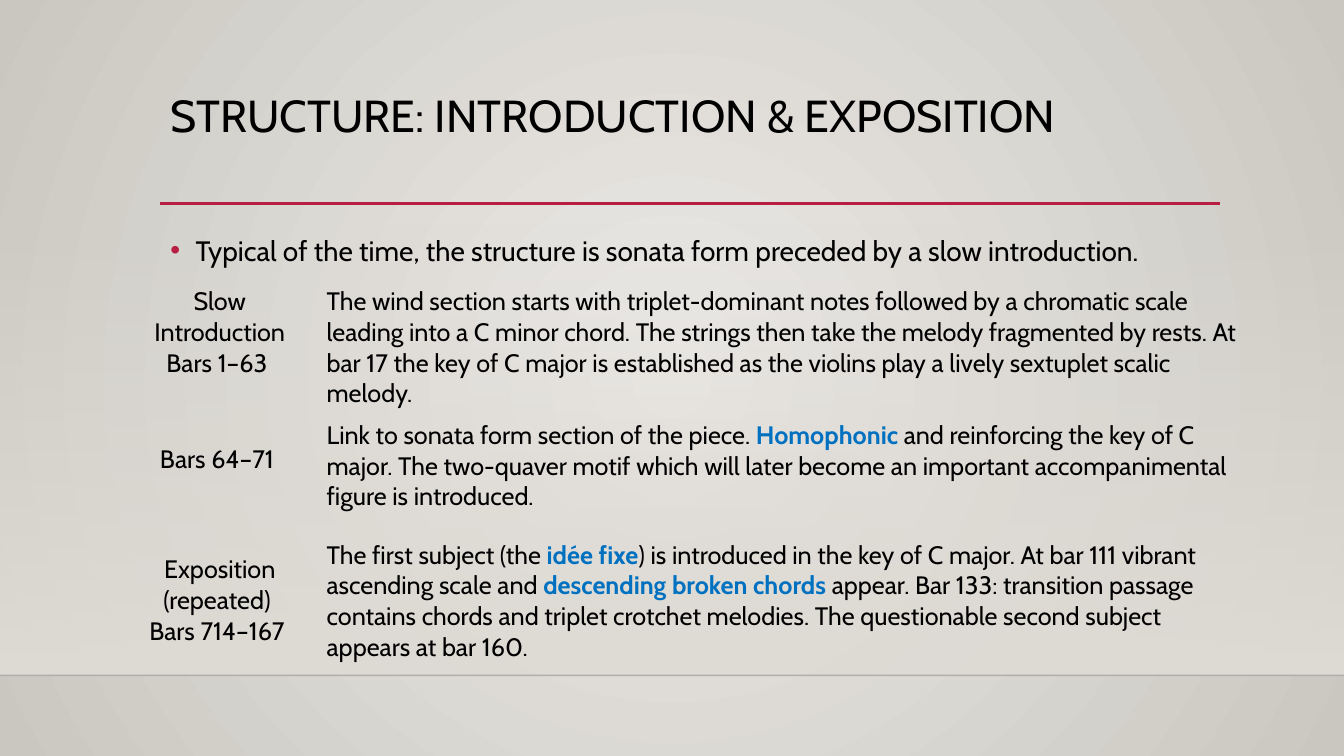
from lxml.etree import SubElement
from pptx import Presentation
from pptx.dml.color import RGBColor
from pptx.enum.shapes import MSO_CONNECTOR, MSO_SHAPE
from pptx.enum.text import MSO_ANCHOR, MSO_AUTO_SIZE, PP_ALIGN
from pptx.oxml import parse_xml
from pptx.oxml.ns import nsdecls, qn
from pptx.util import Inches, Pt

FONT = "Cabin"
BLACK, BLUE, CRIMSON, SAND = "000000", "0070C0", "B71E42", "DFDBD5"
NO_GRID_STYLE = "{2D5ABB26-0587-4C30-8999-92F81FD0307C}"

TITLE = "STRUCTURE: INTRODUCTION & EXPOSITION"
SUMMARY = "Typical of the time, the structure is sonata form preceded by a slow introduction."
SECTIONS = [
    (1.3, ["Slow Introduction Bars 1–63 "], [
        ("The wind section starts with triplet-dominant notes followed by a chromatic scale "
         "leading into a C minor chord. The strings then take the melody fragmented by rests. "
         "At bar 17 the key of C major is established as the violins play a lively sextuplet "
         "scalic melody.", False)]),
    (1.19, ["Bars 64–71 "], [
        ("Link to sonata form section of the piece. ", False),
        ("Homophonic", True),
        (" and reinforcing the key of C major. The two-quaver motif which will later become "
         "an important accompanimental figure is introduced.", False)]),
    (1.61, ["Exposition (repeated) ", "Bars 714–167 "], [
        ("The first subject (the ", False),
        ("idée fixe", True),
        (") is introduced in the key of C major. At bar 111 vibrant ascending scale and ", False),
        ("descending broken chords ", True),
        ("appear. Bar 133: transition passage contains chords and triplet crotchet melodies. "
         "The questionable second subject appears at bar 160.", False)]),
]
COLUMN_WIDTHS = (1.92, 9.32)
LABEL_BOTTOM_MARGIN = 0.36


def color(value):
    return RGBColor.from_string(value)


def style(font, size, value=BLACK, bold=False):
    font.name = FONT
    font.size = Pt(size)
    font.color.rgb = color(value)
    font.bold = bold


def gradient(start, end, start_alpha, direction):
    return parse_xml(
        f'<a:gradFill {nsdecls("a")} rotWithShape="1"><a:gsLst>'
        f'<a:gs pos="0"><a:srgbClr val="{start}"><a:alpha val="{start_alpha * 1000}"/></a:srgbClr></a:gs>'
        f'<a:gs pos="100000"><a:srgbClr val="{end}"/></a:gs></a:gsLst>{direction}</a:gradFill>')


def replace_gradient(fill, parent, new_gradient):
    fill.gradient()
    old_gradient = parent.find(qn("a:gradFill"))
    parent.replace(old_gradient, new_gradient)


def add_rule(slide, left, right, top, value, width, opacity=100):
    rule = slide.shapes.add_connector(
        MSO_CONNECTOR.STRAIGHT, Inches(left), Inches(top), Inches(right), Inches(top))
    rule.line.color.rgb = color(value)
    rule.line.width = Pt(width)
    properties = rule._element.spPr
    if opacity < 100:
        SubElement(properties.find(".//" + qn("a:srgbClr")), qn("a:alpha"), val=str(opacity * 1000))
    SubElement(properties, qn("a:effectLst"))


def add_backdrop(slide):
    circle = ('<a:path path="circle"><a:fillToRect l="50000" t="50000" r="50000" b="50000"/></a:path>')
    background = slide.background
    background.fill.solid()
    replace_gradient(background.fill, slide._element.cSld.bg.bgPr,
                     gradient("ECEAE7", "CAC7C1", 100, circle))
    wall = slide.shapes.add_shape(
        MSO_SHAPE.RECTANGLE, 0, Inches(2.21), Inches(13.33), Inches(4.49))
    wall.shadow.inherit = False
    wall.line.fill.background()
    replace_gradient(wall.fill, wall._element.spPr,
                     gradient(SAND, SAND, 0, '<a:lin ang="5400000" scaled="0"/>'))
    add_rule(slide, 0, 13.33, 6.7, "000001", 1, 20)
    add_rule(slide, 1.59, 12.1, 2.02, CRIMSON, 2.5)


def fill_placeholder(slide, placeholder, text, top, height, size, spacing, bulleted=False):
    slide.shapes._spTree.append(placeholder._element)
    placeholder.left, placeholder.top = Inches(1.59), Inches(top)
    placeholder.width, placeholder.height = Inches(10.5), Inches(height)
    frame = placeholder.text_frame
    frame.text = text
    frame.auto_size = MSO_AUTO_SIZE.NONE
    frame.vertical_anchor = MSO_ANCHOR.TOP
    paragraph = frame.paragraphs[0]
    if bulleted:
        properties = paragraph._p.get_or_add_pPr()
        properties.set("marL", str(Inches(0.25)))
        properties.set("indent", str(-Inches(0.25)))
        SubElement(SubElement(properties, qn("a:buClr")), qn("a:srgbClr"), val=CRIMSON)
        SubElement(properties, qn("a:buFont"), typeface="Arial")
        SubElement(properties, qn("a:buChar"), char="•")
    paragraph.alignment = PP_ALIGN.LEFT
    paragraph.line_spacing = spacing
    paragraph.space_before = Pt(0)
    style(paragraph.font, size)


def add_sections(slide):
    total_height = sum(height for height, _, _ in SECTIONS)
    table = slide.shapes.add_table(
        len(SECTIONS), 2, Inches(1.22), Inches(2.79),
        Inches(sum(COLUMN_WIDTHS)), Inches(total_height)).table
    table.first_row = table.horz_banding = False
    table._tbl.tblPr.find(qn("a:tableStyleId")).text = NO_GRID_STYLE
    for column, width in zip(table.columns, COLUMN_WIDTHS):
        column.width = Inches(width)
    for row, (height, labels, description) in zip(table.rows, SECTIONS):
        row.height = Inches(height)
        label_cell, description_cell = row.cells
        label_cell.fill.background()
        description_cell.fill.background()
        label_cell.vertical_anchor = MSO_ANCHOR.MIDDLE
        label_cell.margin_bottom = Inches(LABEL_BOTTOM_MARGIN)
        label_cell.text = "\n".join(labels)
        for paragraph in label_cell.text_frame.paragraphs:
            paragraph.alignment = PP_ALIGN.CENTER
            style(paragraph.font, 18)
        paragraph = description_cell.text_frame.paragraphs[0]
        for text, highlighted in description:
            run = paragraph.add_run()
            run.text = text
            style(run.font, 18, BLUE if highlighted else BLACK, highlighted)


def main():
    presentation = Presentation()
    presentation.slide_width, presentation.slide_height = Inches(13.33), Inches(7.5)
    slide = presentation.slides.add_slide(presentation.slide_layouts[1])
    title, body = slide.placeholders
    add_backdrop(slide)
    fill_placeholder(slide, title, TITLE, 0.88, 1.15, 32, 0.9)
    fill_placeholder(slide, body, SUMMARY, 2.2, 3.77, 20, 1.2, bulleted=True)
    add_sections(slide)
    presentation.save("out.pptx")


if __name__ == "__main__":
    main()
